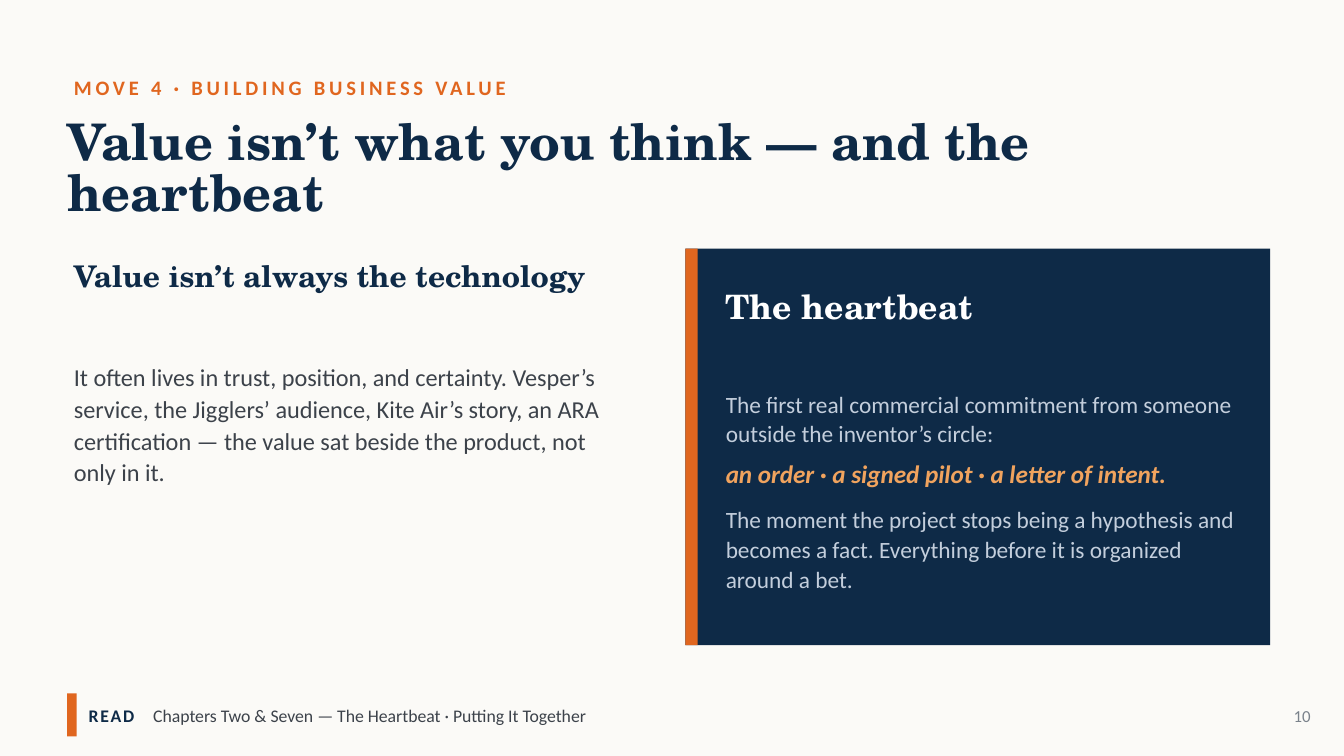
from dataclasses import dataclass

from lxml import etree
from pptx import Presentation
from pptx import util as u
from pptx.dml.color import RGBColor
from pptx.enum import shapes, text
from pptx.oxml.ns import qn


@dataclass(frozen=True)
class Theme:
    paper: str = "FBFAF7"
    navy: str = "0E2A47"
    orange: str = "E0661F"
    amber: str = "F0A35E"
    ink: str = "3C424A"
    mist: str = "C3CEDC"
    grey: str = "7A828B"
    white: str = "FFFFFF"
    serif: str = "TeX Gyre Schola"
    sans: str = "Calibri"
    title: float = 27
    card_heading: float = 18
    heading: float = 16
    accent: float = 13.5
    body: float = 13
    card_body: float = 12.5
    kicker: float = 11
    footer: float = 9.5
    number: float = 9


THEME = Theme()
COLUMNS, ROWS = 100, 56.25  # square grid cells of a tenth of an inch, 16:9
CELL = u.Inches(0.1)
MARGIN, INDENT = 5, 5.5
CARD_LEFT, CARD_TOP, CARD_WIDTH, CARD_HEIGHT = 51, 18.5, 43.5, 29.5
CARD_TEXT_LEFT = CARD_LEFT + 3


def cells(*counts):
    return [round(count * CELL) for count in counts]


def write(para, words, *, size, color, font=THEME.sans, bold=False, italic=False,
          tracking=0, leading=None, after=0, align=text.PP_ALIGN.LEFT):
    """Add a run to the paragraph; lengths are in points."""
    para.alignment = align
    para.space_before, para.space_after = u.Pt(0), u.Pt(after)
    if leading:
        para.line_spacing = u.Pt(leading)
    span = para.add_run()
    span.text = words
    span.font.name, span.font.size = font, u.Pt(size)
    span.font.bold, span.font.italic = bold, italic
    span.font.color.rgb = RGBColor.from_string(color)
    if tracking:
        span.font._element.set("spc", str(tracking * 100))


def prepare(box, inset=0):
    frame = box.text_frame
    frame.word_wrap = True
    frame.auto_size = text.MSO_AUTO_SIZE.NONE
    frame.vertical_anchor = text.MSO_ANCHOR.MIDDLE
    frame.margin_left = frame.margin_right = u.Inches(inset)
    frame.margin_top = frame.margin_bottom = u.Inches(inset / 2)
    return frame


def add_text(page, place, *lines, inset=0, **style):
    """Add a text box with one paragraph per (words, overrides) pair."""
    frame = prepare(page.shapes.add_textbox(*cells(*place)), inset)
    for index, (words, overrides) in enumerate(lines):
        para = frame.add_paragraph() if index else frame.paragraphs[0]
        write(para, words, **{**style, **overrides})


def add_block(page, place, color):
    block = page.shapes.add_shape(shapes.MSO_SHAPE.RECTANGLE, *cells(*place))
    block.shadow.inherit = False
    block.fill.solid()
    block.fill.fore_color.rgb = RGBColor.from_string(color)
    block.line.fill.background()


def add_title(page, place, words):
    title = page.shapes.title
    title.left, title.top, title.width, title.height = cells(*place)
    write(prepare(title).paragraphs[0], words, size=THEME.title, color=THEME.navy,
          font=THEME.serif, bold=True, leading=27.5)


def add_heading(page, place, words, size, color):
    add_text(page, place, (words, {}), size=size, color=color,
             font=THEME.serif, bold=True)


def add_card(page):
    add_block(page, (CARD_LEFT, CARD_TOP, CARD_WIDTH, CARD_HEIGHT), THEME.navy)
    add_block(page, (CARD_LEFT, CARD_TOP, 0.9, CARD_HEIGHT), THEME.orange)
    add_heading(page, (CARD_TEXT_LEFT, 20.8, 38, 4), "The heartbeat",
                THEME.card_heading, THEME.white)
    add_text(
        page, (CARD_TEXT_LEFT, 26, 38.5, 21),
        ("The first real commercial commitment from someone outside the "
         "inventor’s circle:", {"after": 6}),
        ("an order · a signed pilot · a letter of intent.",
         {"after": 8, "size": THEME.accent, "color": THEME.amber,
          "bold": True, "italic": True}),
        ("The moment the project stops being a hypothesis and becomes a fact. "
         "Everything before it is organized around a bet.", {}),
        size=THEME.card_body, color=THEME.mist, leading=16)


def add_footer(page, label, reading, number):
    """Add the reading reference, with a tab after its label, and the page number."""
    add_block(page, (MARGIN, 51.6, 0.7, 3.2), THEME.orange)
    box = page.shapes.add_textbox(*cells(6.6, 51.3, 62, 3.8))
    para = prepare(box).paragraphs[0]
    write(para, label, size=THEME.footer, color=THEME.navy, bold=True, tracking=1)
    write(para, "\t" + reading, size=THEME.footer, color=THEME.ink)
    stops = etree.SubElement(para._p.get_or_add_pPr(), qn("a:tabLst"))
    etree.SubElement(stops, qn("a:tab"), pos=str(u.Inches(0.48)), algn="l")
    add_text(page, (93.5, 51.8, 5, 3), (number, {}), inset=0.1,
             size=THEME.number, color=THEME.grey, align=text.PP_ALIGN.RIGHT)


def main():
    deck = Presentation()
    deck.slide_width, deck.slide_height = cells(COLUMNS, ROWS)
    page = deck.slides.add_slide(deck.slide_layouts.get_by_name("Title Only"))
    page.background.fill.solid()
    page.background.fill.fore_color.rgb = RGBColor.from_string(THEME.paper)

    add_text(page, (INDENT, 5, 60, 3), ("MOVE 4 · BUILDING BUSINESS VALUE", {}),
             size=THEME.kicker, color=THEME.orange, bold=True, tracking=2)
    add_title(page, (MARGIN, 8.2, 90, 9),
              "Value isn’t what you think — and the heartbeat")
    add_heading(page, (INDENT, CARD_TOP, 42, 4), "Value isn’t always the technology",
                THEME.heading, THEME.navy)
    add_text(page, (INDENT, 23.5, 41, 16),
             ("It often lives in trust, position, and certainty. Vesper’s service, "
              "the Jigglers’ audience, Kite Air’s story, an ARA certification — "
              "the value sat beside the product, not only in it.", {}),
             size=THEME.body, color=THEME.ink, leading=17)
    add_card(page)
    add_footer(page, "READ", "Chapters Two & Seven — The Heartbeat · Putting It Together",
               "10")
    deck.save("out.pptx")


if __name__ == "__main__":
    main()
